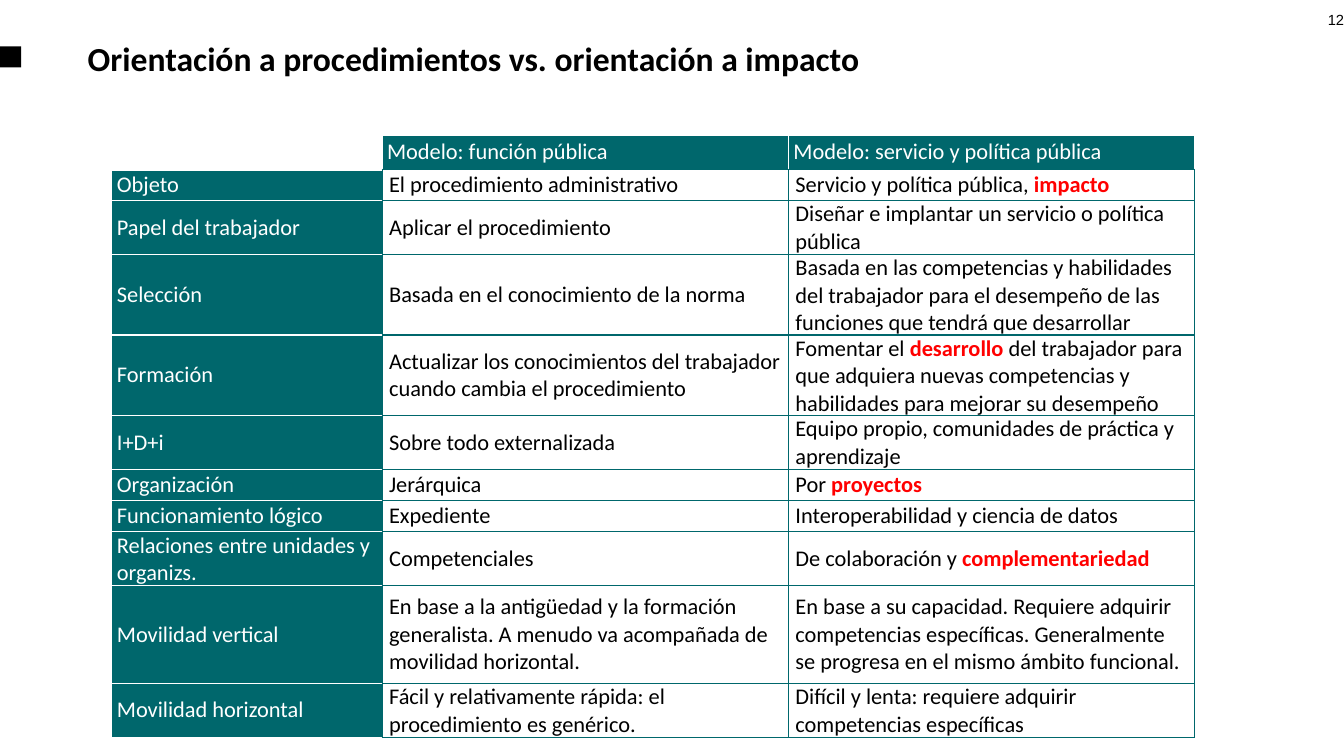
from pptx import Presentation
from pptx.dml.color import RGBColor
from pptx.enum.shapes import MSO_SHAPE
from pptx.enum.text import MSO_ANCHOR, PP_ALIGN
from pptx.oxml.ns import qn
from pptx.util import Inches, Pt
from lxml import etree

RECT = MSO_SHAPE.RECTANGLE
MID = MSO_ANCHOR.MIDDLE
LEFT, RIGHT = PP_ALIGN.LEFT, PP_ALIGN.RIGHT

HEX = {"teal": "00676C", "white": "FFFFFF", "black": "000000", "red": "FF0000"}
TITLE = {"name": "Calibri", "size": Pt(24), "bold": True}
NUMBER = {"name": "Arial", "size": Pt(10.5), "bold": False}
PLAIN = {"name": "Calibri", "size": Pt(16), "bold": False}
STRONG = {**PLAIN, "bold": True}

# Cell kinds: fill, text colour, side inset, borders in order L, R, T, B
KINDS = {
    "corner": ("white", "white", 0.05,
               [("white", 1), ("white", 1), ("white", 1), ("white", 3)]),
    "head": ("teal", "white", 0.05,
             [("white", 1), ("white", 1), ("white", 1), ("teal", 1)]),
    "side": ("teal", "white", 0.05,
             [("white", 1), ("teal", 1), ("white", 1), ("white", 1)]),
    "body": ("white", "black", 0.07, [("teal", 1)] * 4),
}

COLS = [2.68, 4.03, 4.03]
# Row height and texts; words between asterisks are stressed
ROWS = [
    (0.34, "", "Modelo: función pública", "Modelo: servicio y política pública"),
    (0.31, "Objeto", "El procedimiento administrativo",
     "Servicio y política pública, *impacto*"),
    (0.49, "Papel del trabajador", "Aplicar el procedimiento",
     "Diseñar e implantar un servicio o política pública"),
    (0.74, "Selección", "Basada en el conocimiento de la norma",
     "Basada en las competencias y habilidades del trabajador para el "
     "desempeño de las funciones que tendrá que desarrollar"),
    (0.73, "Formación",
     "Actualizar los conocimientos del trabajador cuando cambia el procedimiento",
     "Fomentar el *desarrollo *del trabajador para que adquiera nuevas "
     "competencias y habilidades para mejorar su desempeño"),
    (0.37, "I+D+i", "Sobre todo externalizada",
     "Equipo propio, comunidades de práctica y aprendizaje"),
    (0.31, "Organización", "Jerárquica", "Por *proyectos*"),
    (0.31, "Funcionamiento lógico", "Expediente",
     "Interoperabilidad y ciencia de datos"),
    (0.52, "Relaciones entre unidades y organizs.", "Competenciales",
     "De colaboración y *complementariedad*"),
    (0.97, "Movilidad vertical",
     "En base a la antigüedad y la formación generalista. A menudo va "
     "acompañada de movilidad horizontal.",
     "En base a su capacidad. Requiere adquirir competencias específicas. "
     "Generalmente se progresa en el mismo ámbito funcional."),
    (0.52, "Movilidad horizontal",
     "Fácil y relativamente rápida: el procedimiento es genérico.",
     "Difícil y lenta: requiere adquirir competencias específicas"),
]


def color(name):
    return RGBColor.from_string(HEX[name])


def add_run(para, text, form, tint):
    run = para.add_run()
    run.text = text
    for key, value in form.items():
        setattr(run.font, key, value)
    run.font.color.rgb = color(tint)


def place(shape, box):
    for key, value in zip(("left", "top", "width", "height"), box):
        setattr(shape, key, Inches(value))


def add_title(slide, box):
    title = slide.shapes.title
    place(title, box)
    frame = title.text_frame
    frame.vertical_anchor = MID
    para = frame.paragraphs[0]
    para.alignment = LEFT
    add_run(para, "Orientación a procedimientos vs. orientación a impacto",
            TITLE, "black")


def add_mark(slide, box):
    mark = slide.shapes.add_shape(RECT, *map(Inches, box))
    mark.shadow.inherit = False
    mark.fill.solid()
    mark.fill.fore_color.rgb = color("black")
    mark.line.fill.background()


def add_number(slide, box):
    frame = slide.shapes.add_textbox(*map(Inches, box)).text_frame
    frame.word_wrap = True
    frame.margin_right = 0
    para = frame.paragraphs[0]
    para.alignment = RIGHT
    add_run(para, "12", NUMBER, "black")


def set_edges(cell, edges):
    props = cell._tc.get_or_add_tcPr()
    for side, (tint, width) in zip("LRTB", edges):
        line = etree.SubElement(props, qn(f"a:ln{side}"), w=str(Pt(width)))
        fill = etree.SubElement(line, qn("a:solidFill"))
        etree.SubElement(fill, qn("a:srgbClr"), val=HEX[tint])


def fill_cell(cell, text, kind):
    back, ink, inset, edges = KINDS[kind]
    set_edges(cell, edges)
    cell.fill.solid()
    cell.fill.fore_color.rgb = color(back)
    cell.vertical_anchor = MID
    cell.margin_left = cell.margin_right = Inches(inset)
    cell.margin_top = cell.margin_bottom = 0
    para = cell.text_frame.paragraphs[0]
    for i, part in enumerate(text.split("*")):
        if part and i % 2:
            add_run(para, part, STRONG, "red")
        elif part:
            add_run(para, part, PLAIN, ink)


def add_grid(slide, box):
    grid = slide.shapes.add_table(len(ROWS), len(COLS), *map(Inches, box)).table
    grid.first_row = grid.horz_banding = False
    for col, width in zip(grid.columns, COLS):
        col.width = Inches(width)
    for r, (height, *texts) in enumerate(ROWS):
        grid.rows[r].height = Inches(height)
        for c, text in enumerate(texts):
            if r == 0:
                kind = "head" if c else "corner"
            else:
                kind = "body" if c else "side"
            fill_cell(grid.cell(r, c), text, kind)


def main():
    deck = Presentation()
    deck.slide_width, deck.slide_height = Inches(13.33), Inches(7.5)
    slide = deck.slides.add_slide(deck.slide_layouts[5])
    # Heading band
    add_mark(slide, (0, 0.46, 0.21, 0.21))
    add_number(slide, (12.79, 0.06, 0.54, 0.4))
    add_title(slide, (0.77, 0.25, 11.81, 0.66))
    # Comparison table
    add_grid(slide, (1.11, 1.34, sum(COLS), sum(row[0] for row in ROWS)))
    deck.save("out.pptx")


if __name__ == "__main__":
    main()
